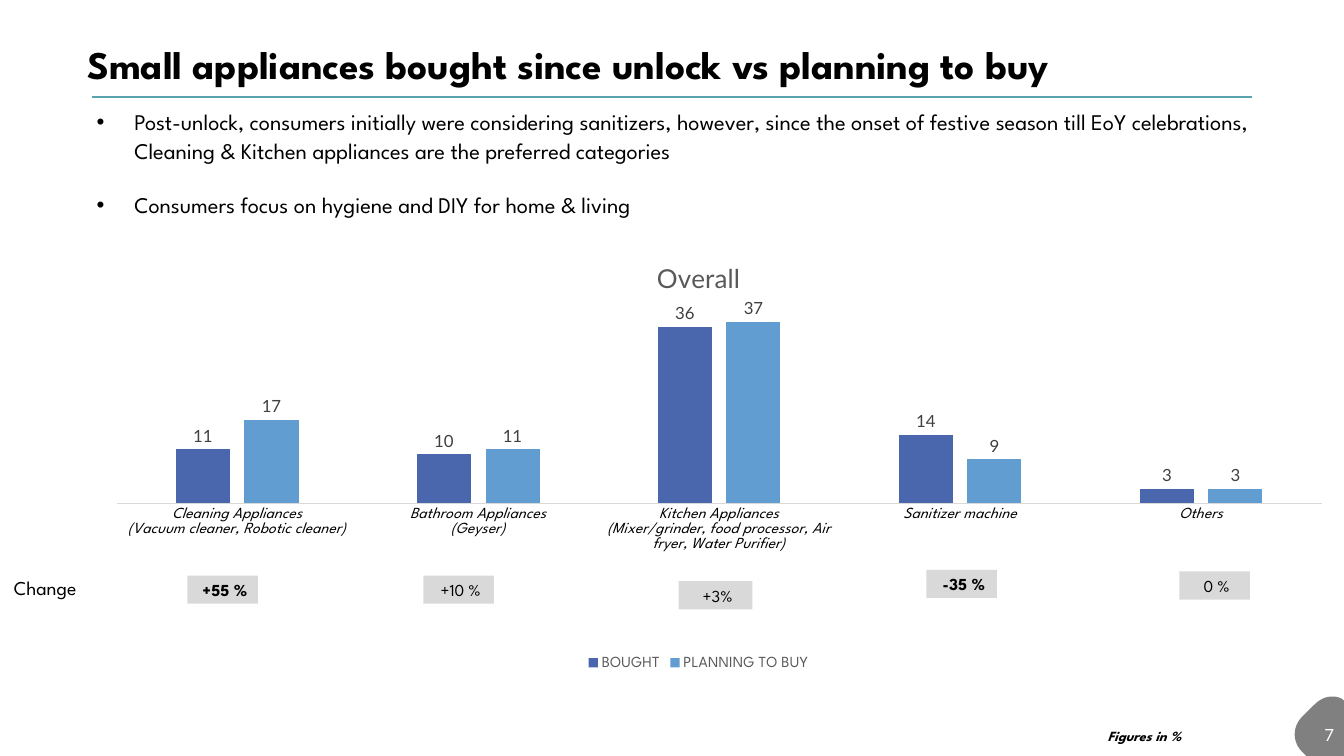
import lxml.etree
import pptx
import pptx.chart.data
import pptx.dml.color
import pptx.enum.chart
import pptx.enum.shapes
import pptx.enum.text
import pptx.oxml.ns
import pptx.util

Pt = pptx.util.Pt
qn = pptx.oxml.ns.qn
ALIGN = pptx.enum.text.PP_ALIGN
ANCHOR = pptx.enum.text.MSO_ANCHOR
GROW = {"auto_size": pptx.enum.text.MSO_AUTO_SIZE.SHAPE_TO_FIT_TEXT}
SPARTAN = "League Spartan"
LATO = "Lato"
COLORS = {
    "black": "000000",
    "white": "FFFFFF",
    "rule": "5AA2AE",
    "corner": "808080",
    "badge": "D9D9D9",
    "axis": "D9D9D9",
    "muted": "595959",
    "value": "404040",
    "bought": "4A66AC",
    "planned": "629DD1",
}
CATEGORIES = [
    "Cleaning Appliances\n(Vacuum cleaner, Robotic cleaner)",
    "Bathroom Appliances\n(Geyser)",
    "Kitchen Appliances\n(Mixer/grinder, food processor, Air fryer, Water Purifier)",
    "Sanitizer machine",
    "Others",
]
SERIES = [
    ("BOUGHT", (11, 10, 36, 14, 3), "bought"),
    ("PLANNING TO BUY", (17, 11, 37, 9, 3), "planned"),
]
PLOT_AREA = {"x": 0.049, "y": 0.153, "w": 0.934, "h": 0.453}
BULLETS = [
    "Post-unlock, consumers initially were considering sanitizers, however, since the onset of "
    "festive season till EoY celebrations, Cleaning & Kitchen appliances are the preferred categories",
    "Consumers focus on hygiene and DIY for home & living",
]
BADGES = [
    (" +55 %", 133.9, 411.1, 50.4, True),
    (" +10 %", 302.4, 411.1, 50.4, False),
    (" +3%", 484.8, 415.2, 52.6, False),
    (" -35 %", 661.7, 407, 50.4, True),
    (" 0 %", 842.4, 408.2, 50.4, False),
]


def rgb(name):
    return pptx.dml.color.RGBColor.from_string(COLORS[name])


def apply_format(target, values):
    for name, value in values.items():
        setattr(target, name, value)


def set_font(font, size, name=SPARTAN, color="black", **styles):
    apply_format(font, {"size": Pt(size), "name": name, **styles})
    font.color.rgb = rgb(color)


def fill_shape(shape, color):
    shape.shadow.inherit = False
    shape.fill.solid()
    shape.fill.fore_color.rgb = rgb(color)
    shape.line.fill.background()


def write_para(para, text, font, layout):
    apply_format(para, layout)
    span = para.add_run()
    span.text = text
    set_font(span.font, **font)


def add_text(page, bounds, text, font, layout={}, frame={}):
    box = page.shapes.add_textbox(*map(Pt, bounds))
    apply_format(box.text_frame, {"word_wrap": True, **frame})
    write_para(box.text_frame.paragraphs[0], text, font, layout)


def add_bullets(page, bounds, texts):
    box = page.shapes.add_textbox(*map(Pt, bounds))
    frame = box.text_frame
    apply_format(frame, {"word_wrap": True, "vertical_anchor": ANCHOR.MIDDLE, **GROW})
    for index, text in enumerate(texts):
        para = frame.add_paragraph() if index else frame.paragraphs[0]
        properties = para._p.get_or_add_pPr()
        properties.set("marL", str(Pt(27)))
        properties.set("indent", str(Pt(-27)))
        lxml.etree.SubElement(properties, qn("a:buFont")).set("typeface", "Arial")
        lxml.etree.SubElement(properties, qn("a:buChar")).set("char", "•")
        layout = {"line_spacing": 1.07, "space_before": Pt(18 if index else 0)}
        write_para(para, text, {"size": 16}, layout)


def add_rule(page, left, right, top):
    kind = pptx.enum.shapes.MSO_CONNECTOR.STRAIGHT
    rule = page.shapes.add_connector(kind, Pt(left), Pt(top), Pt(right), Pt(top))
    rule.line.color.rgb = rgb("rule")
    rule.line.width = Pt(1.5)
    lxml.etree.SubElement(rule.element.spPr, qn("a:effectLst"))


def curve(start, first, second, end, steps=12):
    points = []
    for step in range(1, steps + 1):
        t = step / steps
        u = 1 - t
        weights = (u**3, 3 * u * u * t, 3 * u * t * t, t**3)
        points.append(tuple(
            Pt(sum(w * p for w, p in zip(weights, axis)))
            for axis in zip(start, first, second, end)
        ))
    return points


def add_corner(page):
    top = (951.8, 497.5)
    shoulder = (938.9, 503.3)
    upper, lower = (930.2, 511.9), (930.2, 537.1)
    edges = [(960, 500.4), (960, 540), (933.1, 540), lower]
    outline = curve(top, (954, 497.5), (956.2, 498), (958.3, 499))
    outline += [(Pt(x), Pt(y)) for x, y in edges]
    outline += curve(lower, (923, 529.9), (923, 519.1), upper)
    outline.append((Pt(shoulder[0]), Pt(shoulder[1])))
    outline += curve(shoulder, (942.5, 499.7), (946.8, 497.5), top)
    builder = page.shapes.build_freeform(Pt(top[0]), Pt(top[1]))
    builder.add_line_segments(outline, close=True)
    fill_shape(builder.convert_to_shape(), "corner")


def place_plot(chart):
    area = chart.element.find(".//" + qn("c:plotArea"))
    for old in area.findall(qn("c:layout")):
        area.remove(old)
    layout = lxml.etree.Element(qn("c:layout"))
    area.insert(0, layout)
    manual = lxml.etree.SubElement(layout, qn("c:manualLayout"))
    settings = {"layoutTarget": "inner", "xMode": "edge", "yMode": "edge", **PLOT_AREA}
    for name, value in settings.items():
        lxml.etree.SubElement(manual, qn("c:" + name)).set("val", str(value))


def add_column_chart(page, bounds):
    kinds = pptx.enum.chart
    data = pptx.chart.data.CategoryChartData(number_format="0")
    data.categories = CATEGORIES
    for name, values, color in SERIES:
        data.add_series(name, values)
    kind = kinds.XL_CHART_TYPE.COLUMN_CLUSTERED
    chart = page.shapes.add_chart(kind, *map(Pt, bounds), data).chart
    set_font(chart.font, 10, LATO)
    chart.has_title = True
    title = chart.chart_title.text_frame
    title.text = "Overall"
    set_font(title.paragraphs[0].runs[0].font, 18.6, LATO, "muted", bold=False)
    chart.has_legend = True
    legend = {"position": kinds.XL_LEGEND_POSITION.BOTTOM, "include_in_layout": False}
    apply_format(chart.legend, legend)
    set_font(chart.legend.font, 11, color="muted")

    axis = chart.category_axis
    axis.major_tick_mark = kinds.XL_TICK_MARK.NONE
    axis.format.line.color.rgb = rgb("axis")
    axis.format.line.width = Pt(0.75)
    set_font(axis.tick_labels.font, 11, italic=True)
    scale = {"minimum_scale": 0, "maximum_scale": 40, "has_major_gridlines": False, "visible": False}
    apply_format(chart.value_axis, scale)

    plot = chart.plots[0]
    apply_format(plot, {"gap_width": 219, "overlap": -27, "vary_by_categories": False})
    for series, (name, values, color) in zip(plot.series, SERIES):
        series.format.fill.solid()
        series.format.fill.fore_color.rgb = rgb(color)
        labels = series.data_labels
        position = kinds.XL_LABEL_POSITION.OUTSIDE_END
        apply_format(labels, {"show_value": True, "position": position})
        set_font(labels.font, 12, LATO, "value")
    place_plot(chart)


def add_badge(page, text, left, top, width, bold):
    kind = pptx.enum.shapes.MSO_SHAPE.RECTANGLE
    badge = page.shapes.add_shape(kind, Pt(left), Pt(top), Pt(width), Pt(20.2))
    fill_shape(badge, "badge")
    frame = badge.text_frame
    margins = {f"margin_{side}": Pt(2.88) for side in ("left", "top", "right", "bottom")}
    apply_format(frame, {**margins, **GROW, "word_wrap": True, "vertical_anchor": ANCHOR.TOP})
    font = {"size": 12, "bold": bold}
    write_para(frame.paragraphs[0], text, font, {"alignment": ALIGN.CENTER})


def main():
    deck = pptx.Presentation()
    apply_format(deck, {"slide_width": Pt(960), "slide_height": Pt(540)})
    page = deck.slides.add_slide(deck.slide_layouts[6])
    middle = {"vertical_anchor": ANCHOR.MIDDLE}
    add_corner(page)
    add_rule(page, 66, 894, 69)
    add_text(page, (744, 510.5, 216, 28.8), "7", {"size": 12, "name": LATO, "color": "white"},
             {"alignment": ALIGN.RIGHT}, middle)
    add_column_chart(page, (38.2, 172, 921.6, 309.6))
    add_bullets(page, (62, 72.7, 845.3, 86.4), BULLETS)
    add_text(page, (55.4, 26, 904.6, 43.2), "Small appliances bought since unlock vs planning to buy",
             {"size": 28, "bold": True}, {"line_spacing": 0.9}, middle)
    add_text(page, (784, 516.2, 73.4, 19.4), "Figures in %",
             {"size": 10, "bold": True, "italic": True}, frame=GROW)
    add_text(page, (2.9, 407.5, 113, 24.5), "Change", {"size": 14}, frame=GROW)
    for badge in BADGES:
        add_badge(page, *badge)
    deck.save("out.pptx")


if __name__ == "__main__":
    main()
